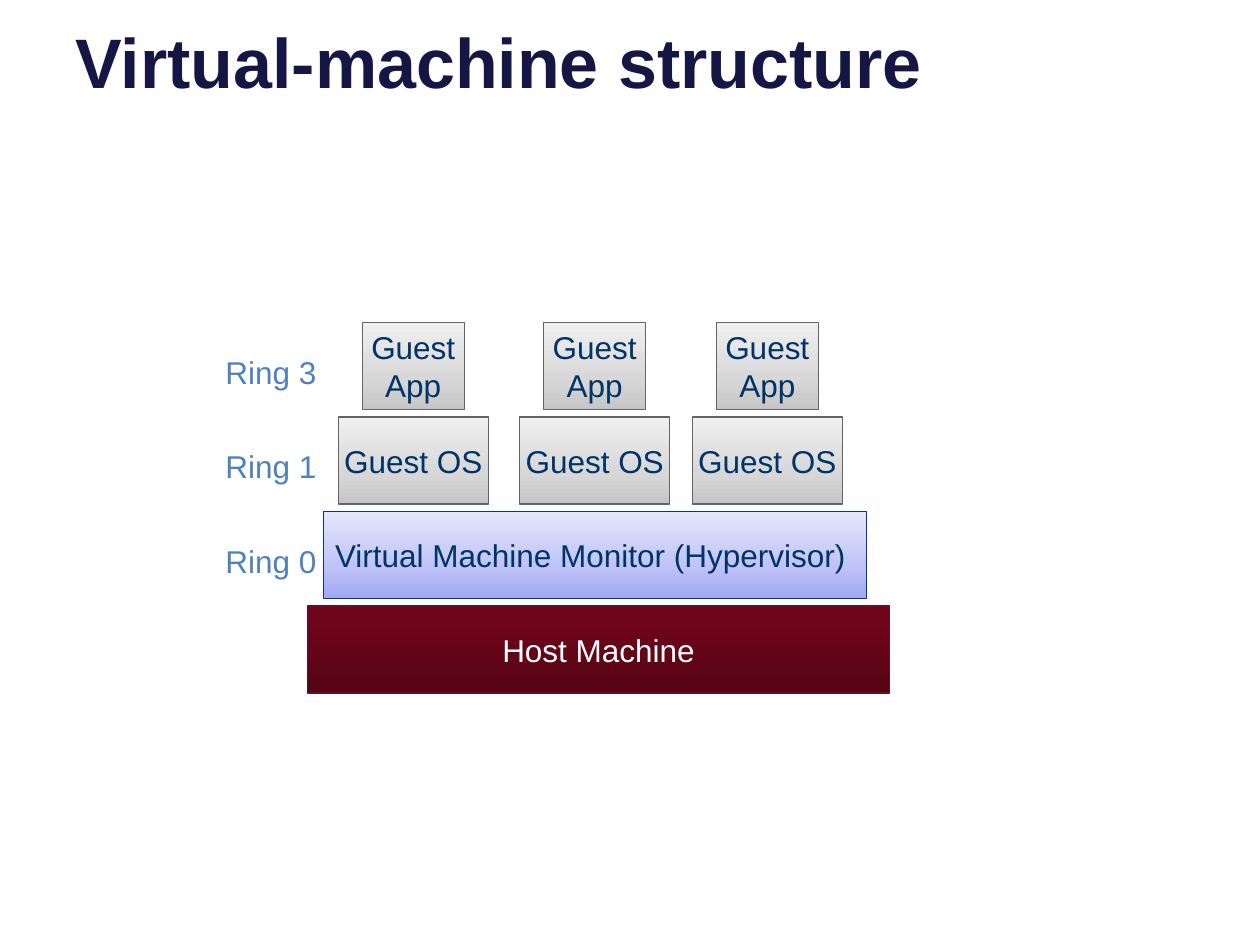
from copy import deepcopy

from pptx import Presentation
from pptx.dml.color import RGBColor
from pptx.enum.shapes import MSO_SHAPE
from pptx.enum.text import MSO_ANCHOR, MSO_AUTO_SIZE, PP_ALIGN
from pptx.oxml.ns import qn
from pptx.util import Inches, Pt

FONT = "Arial"
TITLE_NAVY = RGBColor(0x16, 0x16, 0x45)
RING_BLUE = RGBColor(0x4F, 0x81, 0xBD)
TEXT_NAVY = RGBColor(0x00, 0x33, 0x67)
WHITE = RGBColor(0xFF, 0xFF, 0xFF)

# Styles: gradient stops from bottom to top, outline, text colour
HOST_STYLE = (
    [(0, RGBColor(0x55, 0x04, 0x14)), (0.8, RGBColor(0x6E, 0x05, 0x1A)),
     (1, RGBColor(0x70, 0x03, 0x18))],
    RGBColor(0x65, 0x10, 0x20), WHITE)
MONITOR_STYLE = (
    [(0, RGBColor(0xA1, 0xA8, 0xF4)), (0.35, RGBColor(0xBE, 0xC2, 0xF6)),
     (1, RGBColor(0xE5, 0xE7, 0xFD))],
    RGBColor(0x00, 0x35, 0xA2), TEXT_NAVY)
GUEST_STYLE = (
    [(0, RGBColor(0xC6, 0xC6, 0xC6)), (0.35, RGBColor(0xD7, 0xD7, 0xD7)),
     (1, RGBColor(0xF0, 0xF0, 0xF0))],
    RGBColor(0x64, 0x64, 0x64), TEXT_NAVY)

# Content: layers from bottom to top (ring label, lines, box centres, width, style)
TITLE = "Virtual-machine structure"
GUEST_CENTRES = [3.28, 4.72, 6.09]
LAYERS = [
    (None, ["Host Machine"], [4.75], 4.62, HOST_STYLE),
    ("Ring 0", ["Virtual Machine Monitor (Hypervisor) "], [4.72], 4.31, MONITOR_STYLE),
    ("Ring 1", ["Guest OS"], GUEST_CENTRES, 1.19, GUEST_STYLE),
    ("Ring 3", ["Guest", "App"], GUEST_CENTRES, 0.81, GUEST_STYLE),
]
BOTTOM_LAYER_TOP, LAYER_STEP, LAYER_HEIGHT = 4.81, 0.75, 0.69
RING_LEFT, RING_DROP, RING_WIDTH, RING_HEIGHT = 1.69, 0.19, 0.93, 0.4


def write(frame, lines, size, color, align, bold=False):
    for i, line in enumerate(lines):
        paragraph = frame.paragraphs[0] if i == 0 else frame.add_paragraph()
        paragraph.alignment = align
        run = paragraph.add_run()
        run.text = line
        run.font.name = FONT
        run.font.size = Pt(size)
        run.font.bold = bold
        run.font.color.rgb = color


def fill_gradient(box, stops):
    box.fill.gradient()
    box.fill.gradient_angle = 90
    stop_list = box._element.spPr.find(qn("a:gradFill")).find(qn("a:gsLst"))
    while len(stop_list) < len(stops):
        stop_list.append(deepcopy(stop_list[-1]))
    for stop, (position, color) in zip(box.fill.gradient_stops, stops):
        stop.position = position
        stop.color.rgb = color


def add_box(slide, lines, centre, top, width, style):
    stops, outline, text_color = style
    box = slide.shapes.add_shape(
        MSO_SHAPE.RECTANGLE, Inches(centre - width / 2), Inches(top),
        Inches(width), Inches(LAYER_HEIGHT))
    box.shadow.inherit = False
    fill_gradient(box, stops)
    box.line.color.rgb = outline
    box.line.width = Pt(0.75)
    frame = box.text_frame
    frame.word_wrap = False
    frame.vertical_anchor = MSO_ANCHOR.MIDDLE
    write(frame, lines, 18, text_color, PP_ALIGN.CENTER)


def add_ring_label(slide, ring, layer_top):
    label = slide.shapes.add_textbox(
        Inches(RING_LEFT), Inches(layer_top + RING_DROP),
        Inches(RING_WIDTH), Inches(RING_HEIGHT))
    frame = label.text_frame
    frame.word_wrap = False
    frame.auto_size = MSO_AUTO_SIZE.SHAPE_TO_FIT_TEXT
    write(frame, [ring], 18, RING_BLUE, PP_ALIGN.LEFT)


def main():
    prs = Presentation()
    prs.slide_width, prs.slide_height = Inches(10), Inches(7.5)
    slide = prs.slides.add_slide(prs.slide_layouts[5])

    # Title
    title = slide.shapes.title
    title.left, title.top = Inches(0.5), Inches(-0.37)
    title.width, title.height = Inches(9), Inches(1.7)
    title.text_frame.vertical_anchor = MSO_ANCHOR.MIDDLE
    write(title.text_frame, [TITLE], 40, TITLE_NAVY, PP_ALIGN.LEFT, bold=True)

    # Layer stack with ring labels
    for level, (ring, lines, centres, width, style) in enumerate(LAYERS):
        top = BOTTOM_LAYER_TOP - level * LAYER_STEP
        for centre in centres:
            add_box(slide, lines, centre, top, width, style)
        if ring:
            add_ring_label(slide, ring, top)

    prs.save("out.pptx")


if __name__ == "__main__":
    main()
